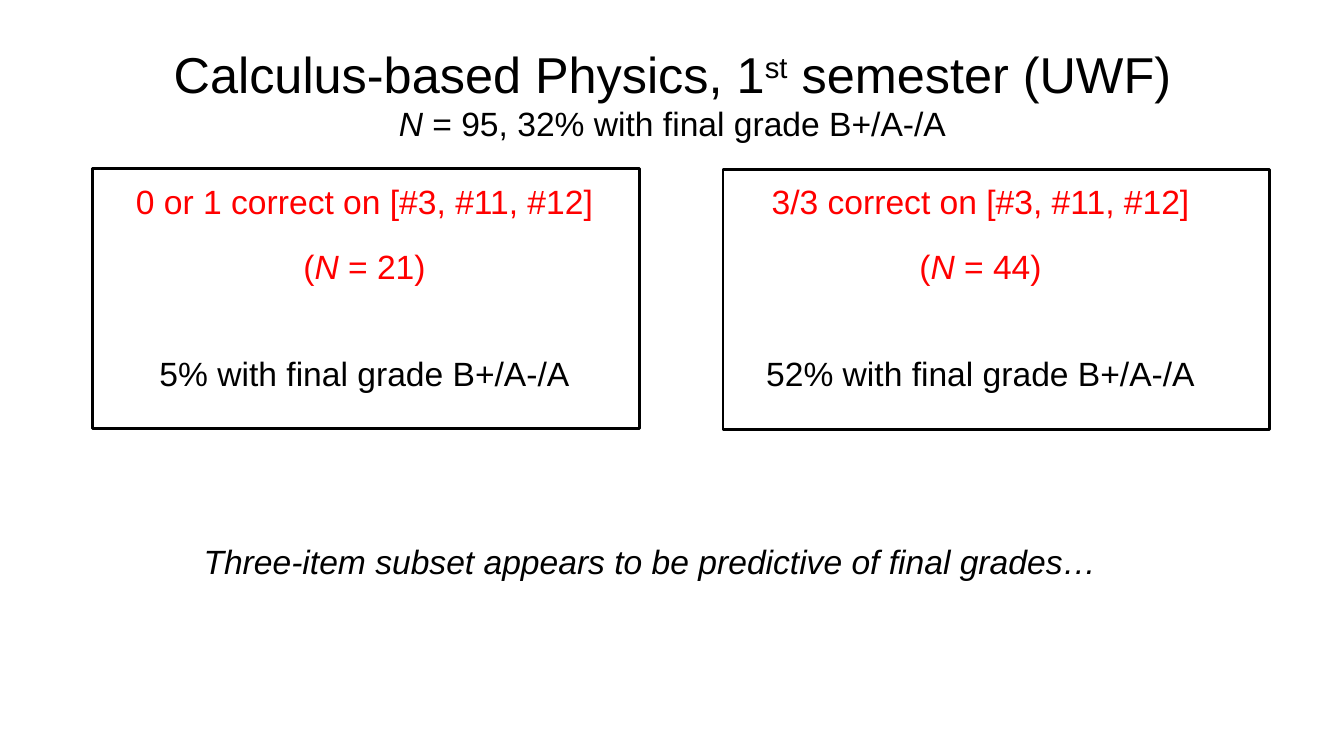
from lxml.etree import SubElement
from pptx import Presentation
from pptx.dml.color import RGBColor
from pptx.enum.shapes import MSO_SHAPE
from pptx.enum.text import MSO_ANCHOR, MSO_AUTO_SIZE, PP_ALIGN
from pptx.oxml.ns import qn
from pptx.util import Inches, Pt

BLACK = RGBColor(0, 0, 0)
RED = RGBColor(255, 0, 0)


def add_span(para, text, **formats):
    span = para.add_run()
    span.text = text
    settings = {"name": "Arial", "size": Pt(24), "italic": False, **formats}
    color = settings.pop("color", BLACK)
    for name, value in settings.items():
        setattr(span.font, name, value)
    span.font.color.rgb = color
    return span


def add_text_box(left, top, width, height):
    box = page.shapes.add_textbox(Inches(left), Inches(top), Inches(width), Inches(height))
    box.text_frame.word_wrap = True
    return box.text_frame


deck = Presentation()
deck.slide_width = Inches(13.33)
deck.slide_height = Inches(7.5)
page = deck.slides.add_slide(deck.slide_layouts[5])

# Title with a smaller second line
title = page.shapes.title
title.left, title.top = Inches(0.67), Inches(0.3)
title.width, title.height = Inches(12), Inches(1.25)
title.text_frame.auto_size = MSO_AUTO_SIZE.NONE
title.text_frame.vertical_anchor = MSO_ANCHOR.MIDDLE
para = title.text_frame.paragraphs[0]
para.alignment = PP_ALIGN.CENTER
add_span(para, "Calculus-based Physics, 1", size=Pt(36))
ordinal = add_span(para, "st", size=Pt(36))
ordinal.font._element.set("baseline", "30000")
add_span(para, " semester (UWF)", size=Pt(36))
para.add_line_break()
line_break = para._p.find(qn("a:br"))
SubElement(line_break, qn("a:rPr"), sz="3600")
add_span(para, "N", italic=True)
add_span(para, " = 95, 32% with final grade B+/A-/A")

# Two result groups: text left, frame left, frame top, score, count, share
groups = [
    (0.67, 0.92, 1.67, "0 or 1 correct", 21, 5),
    (6.78, 7.17, 1.68, "3/3 correct", 44, 52),
]
for text_left, frame_left, frame_top, score, count, share in groups:
    frame = page.shapes.add_shape(
        MSO_SHAPE.RECTANGLE, Inches(frame_left), Inches(frame_top), Inches(5.42), Inches(2.58)
    )
    frame.shadow.inherit = False
    frame.fill.background()
    frame.line.color.rgb = BLACK
    frame.line.width = Pt(2)

    lines = [
        (0, RED, [(f"{score} on [#3, #11, #12]", False)]),
        (17.4, RED, [("(", False), ("N", True), (f" = {count})", False)]),
        (47.4, BLACK, [(f"{share}% with final grade B+/A-/A", False)]),
    ]
    body = add_text_box(text_left, 1.75, 5.89, 4.95)
    for index, (gap, color, spans) in enumerate(lines):
        para = body.add_paragraph() if index else body.paragraphs[0]
        para.alignment = PP_ALIGN.CENTER
        para.space_before = Pt(gap)
        for text, italic in spans:
            add_span(para, text, italic=italic, color=color)

# Conclusion
conclusion = add_text_box(1.92, 5.32, 9.25, 0.5)
add_span(
    conclusion.paragraphs[0],
    "Three-item subset appears to be predictive of final grades…",
    italic=True,
)

deck.save("out.pptx")
